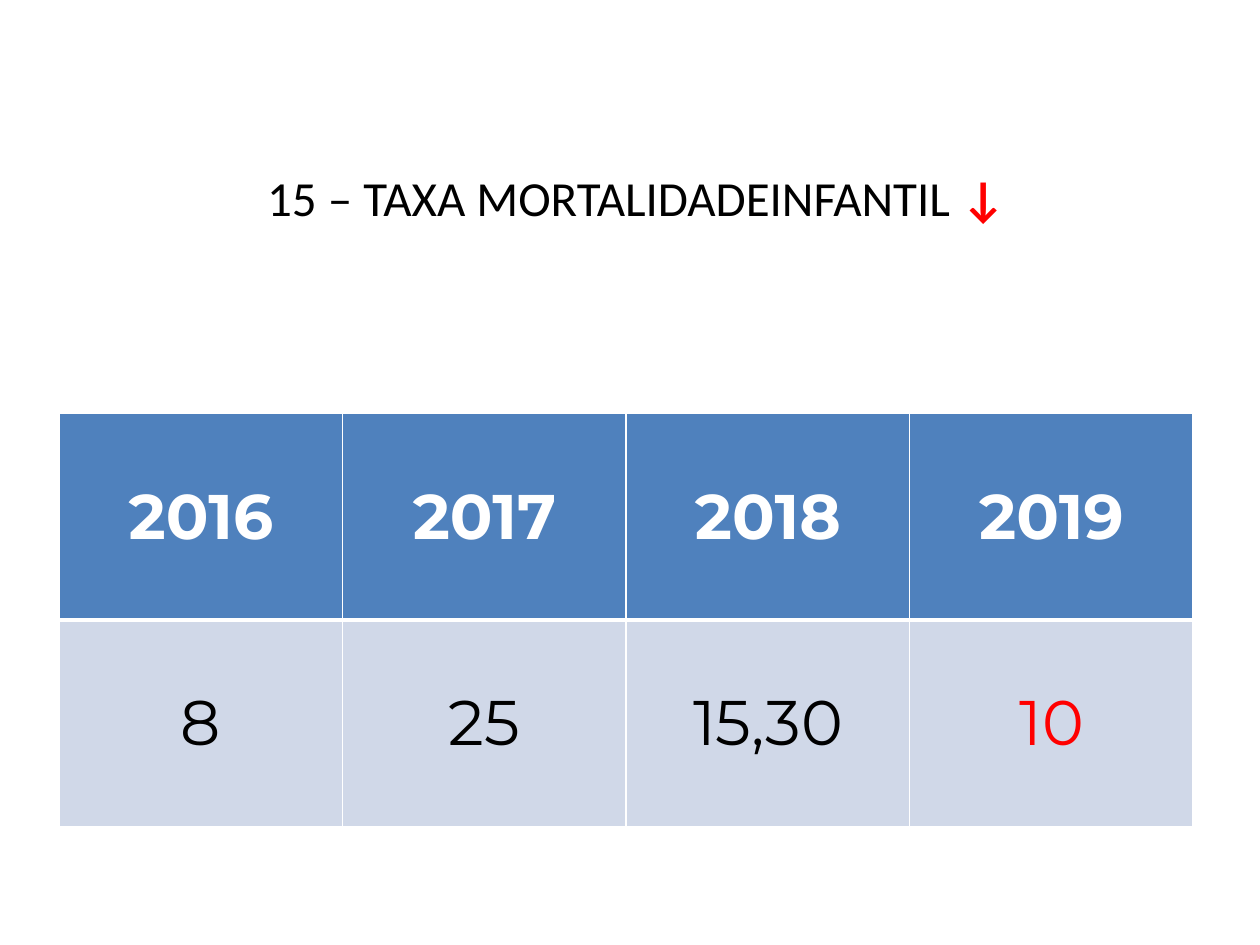
"""Build the infant mortality rate slide with its yearly table."""
from lxml.etree import SubElement
from pptx import Presentation
from pptx.dml.color import RGBColor
from pptx.enum.text import MSO_ANCHOR, PP_ALIGN
from pptx.oxml.ns import qn
from pptx.util import Inches, Pt

BLACK = RGBColor(0, 0, 0)
WHITE = RGBColor(255, 255, 255)
RED = RGBColor(255, 0, 0)
BLUE = RGBColor(0x4F, 0x81, 0xBD)
PALE_BLUE = RGBColor(0xD0, 0xD8, 0xE8)

COLUMN, ROW = Inches(2.25), Inches(1.64)
YEARS = ["2016", "2017", "2018", "2019"]
RATES = ["8", "25", "15,30", "10"]


def add_text(para, text, font="Montserrat", size=36, color=BLACK, bold=False):
    para.alignment = PP_ALIGN.CENTER
    span = para.add_run()
    span.text = text
    span.font.name = font
    span.font.size = Pt(size)
    span.font.color.rgb = color
    span.font.bold = bold


def add_border(cell, side, width):
    line = SubElement(cell._tc.get_or_add_tcPr(), qn(f"a:{side}"), w=str(Pt(width)))
    fill = SubElement(line, qn("a:solidFill"))
    SubElement(fill, qn("a:srgbClr"), val=str(WHITE))


deck = Presentation()
deck.slide_width, deck.slide_height = Inches(10), Inches(7.5)
page = deck.slides.add_slide(deck.slide_layouts[6])

title_box = page.shapes.add_textbox(Inches(0.55), Inches(0.16), 4 * COLUMN, Inches(2.81))
title_frame = title_box.text_frame
title_frame.word_wrap = True
title_frame.vertical_anchor = MSO_ANCHOR.MIDDLE
title = title_frame.paragraphs[0]
add_text(title, "15 – TAXA MORTALIDADEINFANTIL ", font="Calibri", size=28)
add_text(title, "↓", font="Calibri", size=28, color=RED, bold=True)

table = page.shapes.add_table(
    2, len(YEARS), Inches(0.47), Inches(3.28), len(YEARS) * COLUMN, 2 * ROW
).table
for row, values in enumerate([YEARS, RATES]):
    header = row == 0
    table.rows[row].height = ROW
    for column, value in enumerate(values):
        table.columns[column].width = COLUMN
        cell = table.cell(row, column)
        cell.vertical_anchor = MSO_ANCHOR.MIDDLE
        borders = {"lnL": 1, "lnR": 1, "lnT": 1 if header else 3, "lnB": 3 if header else 1}
        for side, width in borders.items():
            add_border(cell, side, width)
        cell.fill.solid()
        cell.fill.fore_color.rgb = BLUE if header else PALE_BLUE
        color = WHITE if header else RED if value == RATES[-1] else BLACK
        add_text(cell.text_frame.paragraphs[0], value, color=color, bold=header)

deck.save("out.pptx")
